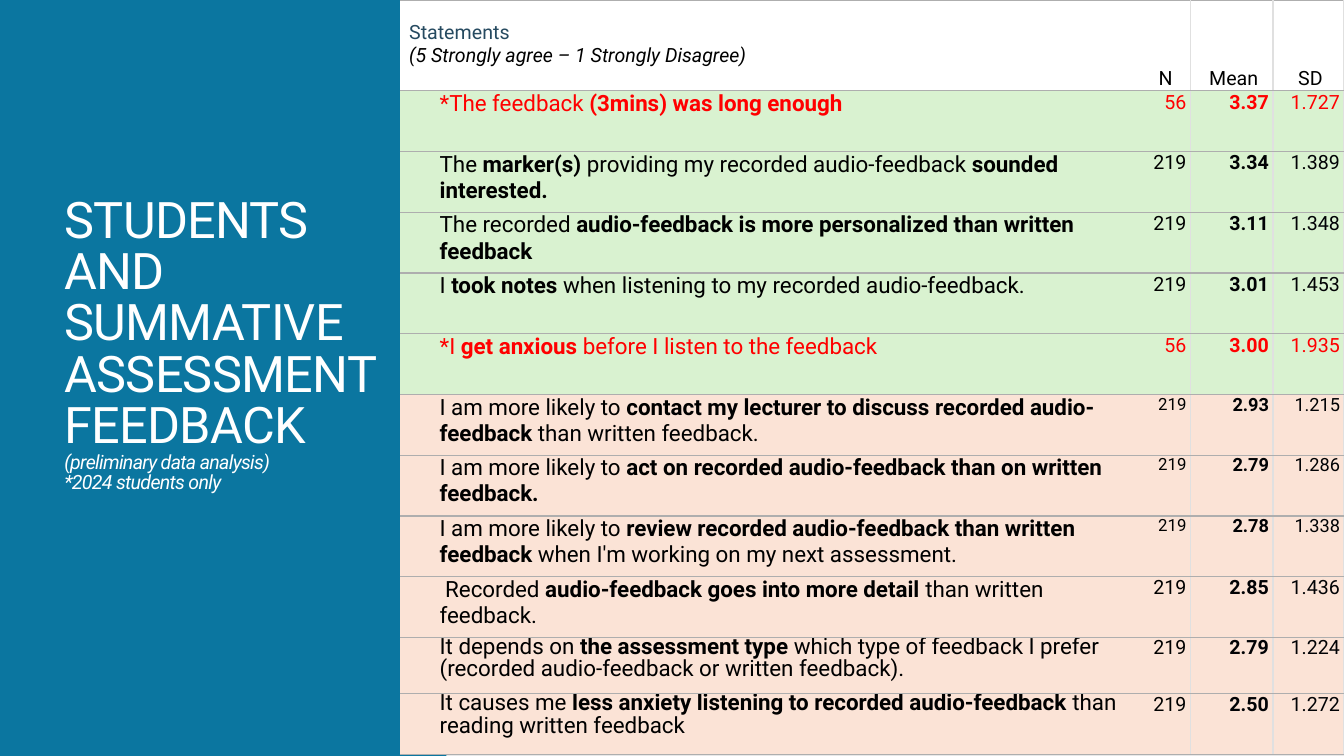
from lxml import etree
from pptx import Presentation
from pptx import util as u
from pptx.dml.color import RGBColor
from pptx.enum import shapes, text
from pptx.oxml.ns import qn

COLORS = {
    "panel": "0B76A0", "background": "E8E8E8", "white": "FFFFFF",
    "agree": "D9F2D0", "disagree": "FBE3D6", "heading": "264A60",
    "black": "000000", "figure": "010205", "red": "FF0000",
    "row_line": "AEAEAE", "column_line": "E0E0E0",
}
LEFT, RIGHT, CENTER = text.PP_ALIGN.LEFT, text.PP_ALIGN.RIGHT, text.PP_ALIGN.CENTER

# Statement with bold parts between bars, N, mean, SD
RESULTS = [
    ("*The feedback |(3mins) was long enough|", "56", "3.37", "1.727"),
    ("The |marker(s)| providing my recorded audio-feedback |sounded interested.|", "219", "3.34", "1.389"),
    ("The recorded |audio-feedback is more personalized than written feedback|", "219", "3.11", "1.348"),
    ("I |took notes |when listening to my recorded audio-feedback.", "219", "3.01", "1.453"),
    ("*I |get anxious| before I listen to the feedback", "56", "3.00", "1.935"),
    ("I am more likely to |contact my lecturer to discuss recorded audio-feedback |than written feedback.",
     "219", "2.93", "1.215"),
    ("I am more likely to |act on recorded audio-feedback than on written feedback.|", "219", "2.79", "1.286"),
    ("I am more likely to |review recorded audio-feedback than written feedback| "
     "when I'm working on my next assessment.", "219", "2.78", "1.338"),
    (" Recorded |audio-feedback goes into more detail |than written feedback.", "219", "2.85", "1.436"),
    ("It depends on |the assessment type |which type of feedback I prefer "
     "(recorded audio-feedback or written feedback).", "219", "2.79", "1.224"),
    ("It causes me |less anxiety listening to recorded audio-feedback |than reading written feedback",
     "219", "2.50", "1.272"),
]


def add_span(para, words, size, color, bold=False, italic=False):
    span = para.add_run()
    span.text = words
    span.font.name = "Roboto"
    span.font.size = u.Pt(size)
    span.font.bold = bold
    span.font.italic = italic
    span.font.color.rgb = RGBColor.from_string(COLORS[color])
    return span


def prepare_cell(cell, column, fill, left, align):
    """Fill the cell, rule its sides and return its first paragraph."""
    cell.fill.solid()
    cell.fill.fore_color.rgb = RGBColor.from_string(COLORS[fill])
    cell.margin_left, cell.margin_right = u.Cm(left), u.Cm(0.1 if align == RIGHT else 0)
    cell.margin_top = cell.margin_bottom = 0
    sides = {
        "lnL": "column_line" if column > 1 else None,
        "lnR": "column_line" if column > 0 else None,
        "lnT": "row_line",
        "lnB": "row_line",
    }
    properties = cell._tc.get_or_add_tcPr()
    for place, (side, color) in enumerate(sides.items()):
        line = etree.Element(qn("a:" + side), w=str(u.Pt(1)))
        if color:
            paint = etree.SubElement(line, qn("a:solidFill"))
            etree.SubElement(paint, qn("a:srgbClr"), val=COLORS[color])
        else:
            etree.SubElement(line, qn("a:noFill"))
        properties.insert(place, line)
    para = cell.text_frame.paragraphs[0]
    para.alignment = align
    return para


deck = Presentation()
deck.slide_width, deck.slide_height = u.Cm(33.87), u.Cm(19.05)
page = deck.slides.add_slide(deck.slide_layouts[5])
page.background.fill.solid()
page.background.fill.fore_color.rgb = RGBColor.from_string(COLORS["background"])

# Title on its side panel
title = page.shapes.title
title.left, title.top, title.width, title.height = u.Cm(1.37), u.Cm(1.45), u.Cm(8.56), u.Cm(16.03)
frame = title.text_frame
frame.word_wrap = True
frame.auto_size = text.MSO_AUTO_SIZE.NONE
frame.vertical_anchor = text.MSO_ANCHOR.MIDDLE
frame.margin_bottom = u.Cm(1.65)
para = frame.paragraphs[0]
para.alignment = LEFT
para.line_spacing = 0.85
title_lines = [
    ("STUDENTS AND SUMMATIVE ASSESSMENT FEEDBACK", 36, False),
    ("(preliminary data analysis)", 14, True),
    ("*2024 students only", 14, True),
]
for number, (words, size, italic) in enumerate(title_lines):
    if number:
        para.add_line_break()
    span = add_span(para, words, size, "white", italic=italic)
    span._r.get_or_add_rPr().set("spc", "-50")

panel = page.shapes.add_shape(shapes.MSO_SHAPE.RECTANGLE, 0, 0, u.Cm(11.25), deck.slide_height)
panel.shadow.inherit = False
panel.fill.solid()
panel.fill.fore_color.rgb = RGBColor.from_string(COLORS["panel"])
panel.line.fill.background()
title.element.addprevious(panel.element)

# Results table
table = page.shapes.add_table(
    len(RESULTS) + 1, 4, u.Cm(10.08), 0, u.Cm(23.79), deck.slide_height).table
for column, width in zip(table.columns, (18.57, 1.35, 2.08, 1.79)):
    column.width = u.Cm(width)
for row, height in zip(table.rows, [2.29] + [1.53] * 9 + [1.42, 1.54]):
    row.height = u.Cm(height)

heading = table.cell(0, 0)
para = prepare_cell(heading, 0, "white", 0.23, LEFT)
heading.margin_top = u.Cm(0.56)
para.line_spacing = u.Pt(16)
add_span(para, "Statements", 14, "heading")
para = heading.text_frame.add_paragraph()
para.line_spacing = u.Pt(16)
add_span(para, "(5 Strongly agree – 1 Strongly Disagree)", 14, "black", italic=True)
for column, label in enumerate(("N", "Mean", "SD"), 1):
    cell = table.cell(0, column)
    cell.vertical_anchor = text.MSO_ANCHOR.BOTTOM
    para = prepare_cell(cell, column, "white", 0.1, CENTER)
    para.line_spacing = u.Pt(16)
    add_span(para, label, 14, "black")

for row, (statement, *figures) in enumerate(RESULTS, 1):
    fill = "agree" if row <= 5 else "disagree"
    red = statement.startswith("*")
    tight = row >= 10
    sizes = (12, 13, 13) if 6 <= row <= 8 else (14, 14, 14)

    para = prepare_cell(table.cell(row, 0), 0, fill, 1, LEFT)
    if tight:
        para.line_spacing = u.Pt(16)
    for part, words in enumerate(statement.split("|")):
        if words:
            add_span(para, words, 16, "red" if red else "black", bold=part % 2 == 1)

    for column, (figure, size) in enumerate(zip(figures, sizes), 1):
        para = prepare_cell(table.cell(row, column), column, fill, 0.1, RIGHT)
        if tight:
            para.line_spacing = u.Pt(16)
        color = "red" if red else "black" if column == 1 else "figure"
        add_span(para, figure, size, color, bold=column == 2)

deck.save("out.pptx")
